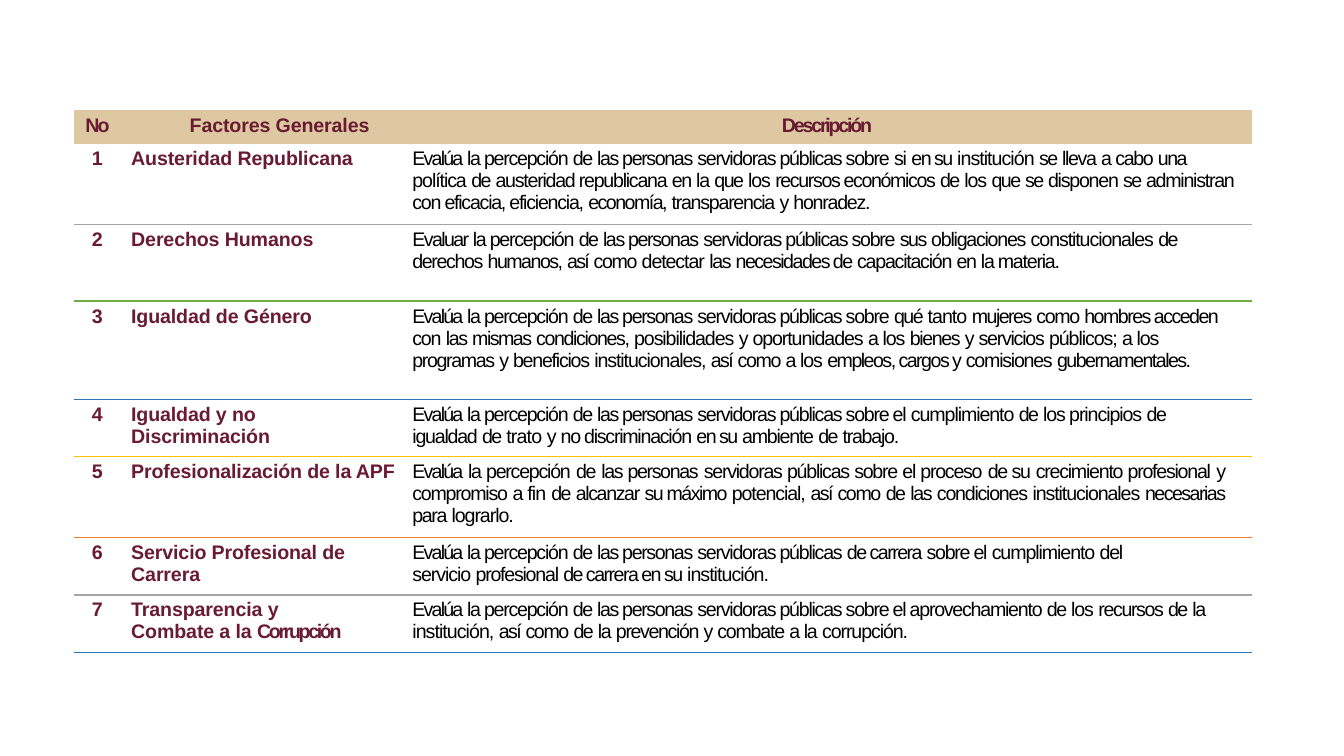
from itertools import groupby

from lxml import etree
from pptx import Presentation
from pptx import util as u
from pptx.dml.color import RGBColor
from pptx.enum import text
from pptx.oxml import ns

WINE = RGBColor(0x69, 0x1B, 0x33)
SAND = RGBColor(0xDE, 0xC8, 0xA1)
BLACK = RGBColor(0x00, 0x00, 0x00)
WHITE = RGBColor(0xFF, 0xFF, 0xFF)
GREY = RGBColor(0xA5, 0xA5, 0xA5)
GREEN = RGBColor(0x6F, 0xAC, 0x46)
BLUE = RGBColor(0x2D, 0x75, 0xB6)
YELLOW = RGBColor(0xFF, 0xC0, 0x00)
ORANGE = RGBColor(0xEC, 0x7C, 0x30)

LEFT = text.PP_ALIGN.LEFT
CENTER = text.PP_ALIGN.CENTER
JUSTIFY = text.PP_ALIGN.JUSTIFY

# Letter spacing in points for particular words of the descriptions
WORDS_BY_SPACING = {
    -1.4: "a",
    -1.3: "Evalúa",
    -1.2: "Evaluar se así",
    -1.1: "de en su sus qué que una y mujeres hombres acceden mismas economía, humanos, "
          "necesidades empleos, cargos gubernamentales. máximo necesarias carrera",
    -1.0: "las personas lleva cabo recursos económicos derechos como condiciones, bienes "
          "programas alcanzar para prevención",
    -0.8: "si política los constitucionales detectar posibilidades oportunidades públicos; "
          "institucionales, institucionales potencial, cumplimiento principios servicio "
          "lograrlo. corrupción.",
    -0.7: "institución institución, institución. tanto",
    -0.6: "trato fin",
}
SPACING = {word: points for points, words in WORDS_BY_SPACING.items() for word in words.split()}
DESCRIPTION_SPACING = -0.9
FACTOR_SPACING = -0.1

# Factor, its right indent, description paragraphs, their right indent,
# alignment, row height, rule below (lengths in points)
FACTORS = [
    ("Austeridad Republicana", 0,
     ["Evalúa la percepción de las personas servidoras públicas sobre si en su institución se "
      "lleva a cabo una política de austeridad republicana en la que los recursos económicos de "
      "los que se disponen se administran con eficacia, eficiencia, economía, transparencia y "
      "honradez."], 10, LEFT, 57.6, GREY),
    ("Derechos Humanos", 0,
     ["Evaluar la percepción de las personas servidoras públicas sobre sus obligaciones "
      "constitucionales de",
      "derechos humanos, así como detectar las necesidades de capacitación en la materia."],
     0, LEFT, 54.9, GREEN),
    ("Igualdad de Género", 0,
     ["Evalúa la percepción de las personas servidoras públicas sobre qué tanto mujeres como "
      "hombres acceden con las mismas condiciones, posibilidades y oportunidades a los bienes y "
      "servicios públicos; a los programas y beneficios institucionales, así como a los empleos, "
      "cargos y comisiones gubernamentales."], 21.5, LEFT, 70.3, BLUE),
    ("Igualdad y no Discriminación", 36,
     ["Evalúa la percepción de las personas servidoras públicas sobre el cumplimiento de los "
      "principios de igualdad de trato y no discriminación en su ambiente de trabajo."],
     20, LEFT, 41, YELLOW),
    ("Profesionalización de la APF", 0,
     ["Evalúa la percepción de las personas servidoras públicas sobre el proceso de su "
      "crecimiento profesional y compromiso a fin de alcanzar su máximo potencial, así como de "
      "las condiciones institucionales necesarias para lograrlo."], 19.5, JUSTIFY, 57.6, ORANGE),
    ("Servicio Profesional de Carrera", 0,
     ["Evalúa la percepción de las personas servidoras públicas de carrera sobre el cumplimiento "
      "del servicio profesional de carrera en su institución."], 50, LEFT, 41, GREY),
    ("Transparencia y Combate a la Corrupción", 32,
     ["Evalúa la percepción de las personas servidoras públicas sobre el aprovechamiento de los "
      "recursos de la institución, así como de la prevención y combate a la corrupción."],
     31, LEFT, 41, BLUE),
]
COLUMN_WIDTHS = [33.2, 201.6, 606.8]
HEADER_HEIGHT = 23.8


class SlideBuilder:
    def __init__(self, slide, font="Arial", size=14):
        self.slide, self.font, self.size = slide, font, size

    def table(self, left, top, widths, heights):
        frame = self.slide.shapes.add_table(
            len(heights), len(widths), u.Pt(left), u.Pt(top), u.Pt(sum(widths)), u.Pt(sum(heights)))
        table = frame.table
        table.first_row = table.horz_banding = False
        for column, width in zip(table.columns, widths):
            column.width = u.Pt(width)
        for row, height in zip(table.rows, heights):
            row.height = u.Pt(height)
        return table

    def cell(self, cell, fill, above=None, below=None):
        cell.margin_left = cell.margin_right = cell.margin_bottom = 0
        cell.margin_top = u.Pt(3)
        properties = cell._tc.get_or_add_tcPr()
        for side, color in (("L", None), ("R", None), ("T", above), ("B", below)):
            line = etree.SubElement(properties, ns.qn(f"a:ln{side}"), w=str(u.Pt(1)))
            if color is None:
                etree.SubElement(line, ns.qn("a:noFill"))
            else:
                solid = etree.SubElement(line, ns.qn("a:solidFill"))
                etree.SubElement(solid, ns.qn("a:srgbClr"), val=str(color))
        cell.fill.solid()
        cell.fill.fore_color.rgb = fill

    def cell_text(self, cell, paragraphs, align=LEFT, indent=0, right=0, color=WINE, bold=True):
        """Each paragraph is a list of (text, letter spacing) runs."""
        frame = cell.text_frame
        for index, runs in enumerate(paragraphs):
            paragraph = frame.paragraphs[0] if index == 0 else frame.add_paragraph()
            paragraph.alignment = align
            properties = paragraph._p.get_or_add_pPr()
            properties.set("marL", str(u.Pt(indent)))
            properties.set("marR", str(u.Pt(right)))
            for content, spacing in runs:
                run = paragraph.add_run()
                run.text = content
                run.font.name, run.font.size = self.font, u.Pt(self.size)
                run.font.bold = bold
                run.font.color.rgb = color
                run._r.get_or_add_rPr().set("spc", str(round(spacing * 100)))


def description_runs(sentence):
    """Join neighbouring words of equal letter spacing into one run."""
    words = sentence.split()
    groups = [(" ".join(group), spacing) for spacing, group in
              groupby(words, key=lambda word: SPACING.get(word, DESCRIPTION_SPACING))]
    return [(content + " ", spacing) for content, spacing in groups[:-1]] + groups[-1:]


def factor_runs(name):
    start, found, _ = name.partition("Corrupción")
    return [(start, FACTOR_SPACING)] + ([(found, -1.7)] if found else [])


def main():
    presentation = Presentation()
    presentation.slide_width, presentation.slide_height = u.Pt(960), u.Pt(540)
    builder = SlideBuilder(presentation.slides.add_slide(presentation.slide_layouts[6]))
    heights = [HEADER_HEIGHT] + [factor[5] for factor in FACTORS]
    table = builder.table(52.6, 78.8, COLUMN_WIDTHS, heights)

    # Header row
    headers = [("No", -1.4, CENTER, 0.7), ("Factores Generales", FACTOR_SPACING, LEFT, 49.7),
               ("Descripción", -1.6, CENTER, 0)]
    for column, (label, spacing, align, indent) in enumerate(headers):
        cell = table.cell(0, column)
        builder.cell(cell, SAND)
        builder.cell_text(cell, [[(label, spacing)]], align, indent)

    # One row per factor
    above = None
    for number, factor in enumerate(FACTORS, start=1):
        name, name_right, sentences, right, align, _, below = factor
        number_cell, name_cell, description_cell = table.rows[number].cells
        for cell in (number_cell, name_cell, description_cell):
            builder.cell(cell, WHITE, above, below)
        builder.cell_text(number_cell, [[(str(number), 0)]], CENTER, 0.7)
        builder.cell_text(name_cell, [factor_runs(name)], LEFT, 7.9, name_right)
        builder.cell_text(description_cell, [description_runs(sentence) for sentence in sentences],
                          align, 7.2, right, BLACK, False)
        above = below

    presentation.save("out.pptx")


if __name__ == "__main__":
    main()
